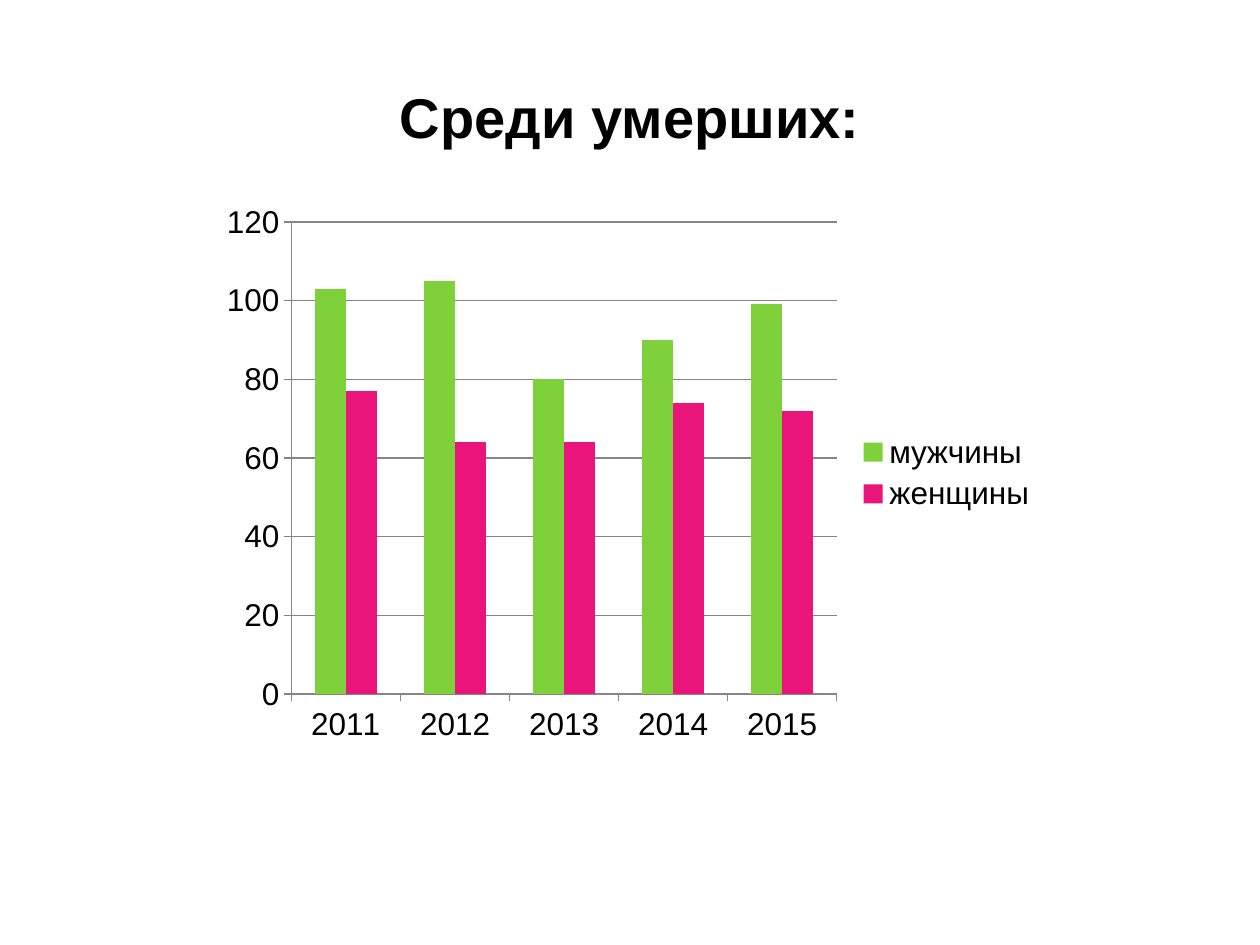
"""Builds a slide with a column chart of deaths among men and women by year."""
from dataclasses import dataclass

from pptx import Presentation
from pptx import util as u
from pptx.chart.data import CategoryChartData
from pptx.dml.color import RGBColor
from pptx.enum import chart as ch
from pptx.enum import text

PX = 914400 // 126


@dataclass(frozen=True)
class Theme:
    font: str = "Arial"
    ink: str = "000000"
    grid: str = "868686"
    men: str = "7FD13B"
    women: str = "EA157A"
    title_size: int = 32
    chart_size: int = 18
    hairline: float = 0.75


class SlideBuilder:
    def __init__(self, slide, theme):
        self.slide = slide
        self.theme = theme

    def box(self, *lengths):
        return [length * PX for length in lengths]

    def style_font(self, font, size, bold=False):
        font.name = self.theme.font
        font.size = u.Pt(size)
        font.bold = bold
        font.color.rgb = RGBColor.from_string(self.theme.ink)

    def style_line(self, line):
        line.color.rgb = RGBColor.from_string(self.theme.grid)
        line.width = u.Pt(self.theme.hairline)

    def title(self, wording, left, top, width, height):
        frame = self.slide.shapes.add_textbox(*self.box(left, top, width, height)).text_frame
        frame.word_wrap = True
        frame.vertical_anchor = text.MSO_ANCHOR.MIDDLE
        heading = frame.paragraphs[0]
        heading.alignment = text.PP_ALIGN.CENTER
        run = heading.add_run()
        run.text = wording
        self.style_font(run.font, self.theme.title_size, bold=True)

    def column_chart(self, years, series, left, top, width, height):
        data = CategoryChartData()
        data.categories = years
        for name, values, _ in series:
            data.add_series(name, values)
        chart = self.slide.shapes.add_chart(
            ch.XL_CHART_TYPE.COLUMN_CLUSTERED, *self.box(left, top, width, height), data
        ).chart
        self.style_font(chart.font, self.theme.chart_size)
        chart.has_title = False
        chart.has_legend = True
        chart.legend.position = ch.XL_LEGEND_POSITION.RIGHT
        chart.legend.include_in_layout = False

        columns = chart.plots[0]
        columns.vary_by_categories = False
        columns.gap_width = 150
        columns.overlap = 0
        for column, (_, _, color) in zip(columns.series, series):
            column.format.fill.solid()
            column.format.fill.fore_color.rgb = RGBColor.from_string(color)

        for axis in (chart.category_axis, chart.value_axis):
            axis.major_tick_mark = ch.XL_TICK_MARK.OUTSIDE
            axis.minor_tick_mark = ch.XL_TICK_MARK.NONE
            self.style_line(axis.format.line)
        deaths = chart.value_axis
        deaths.minimum_scale, deaths.maximum_scale, deaths.major_unit = 0, 120, 20
        deaths.has_major_gridlines = True
        self.style_line(deaths.major_gridlines.format.line)


def main():
    deck = Presentation()
    deck.slide_width, deck.slide_height = 1260 * PX, 945 * PX
    theme = Theme()
    builder = SlideBuilder(deck.slides.add_slide(deck.slide_layouts[6]), theme)
    builder.title("Среди умерших:", 63, 38, 1134, 157)
    years = [str(year) for year in range(2011, 2016)]
    deaths_by_sex = [
        ("мужчины", (103, 105, 80, 90, 99), theme.men),
        ("женщины", (77, 64, 64, 74, 72), theme.women),
    ]
    builder.column_chart(years, deaths_by_sex, 210, 193, 840, 560)
    deck.save("out.pptx")


if __name__ == "__main__":
    main()
